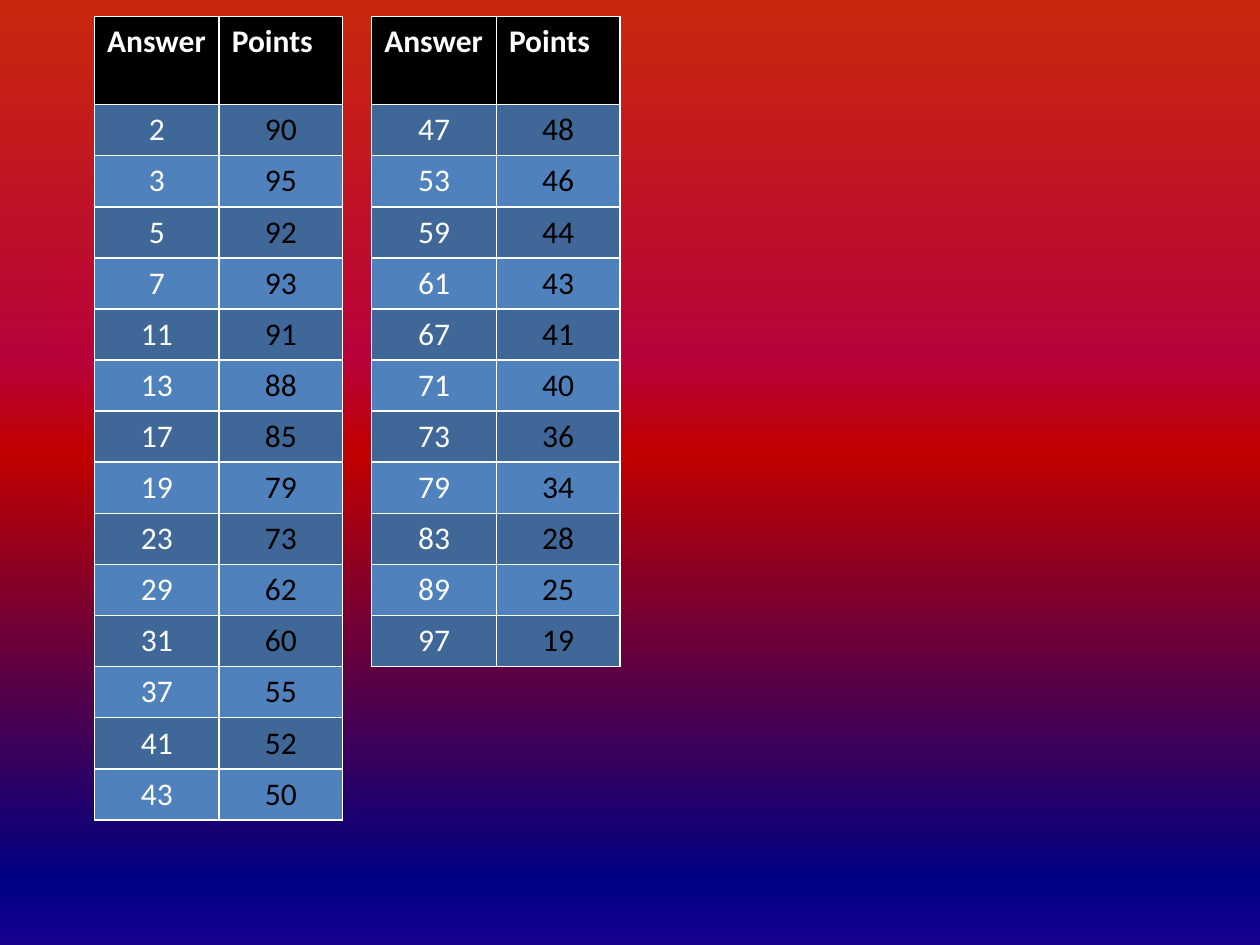
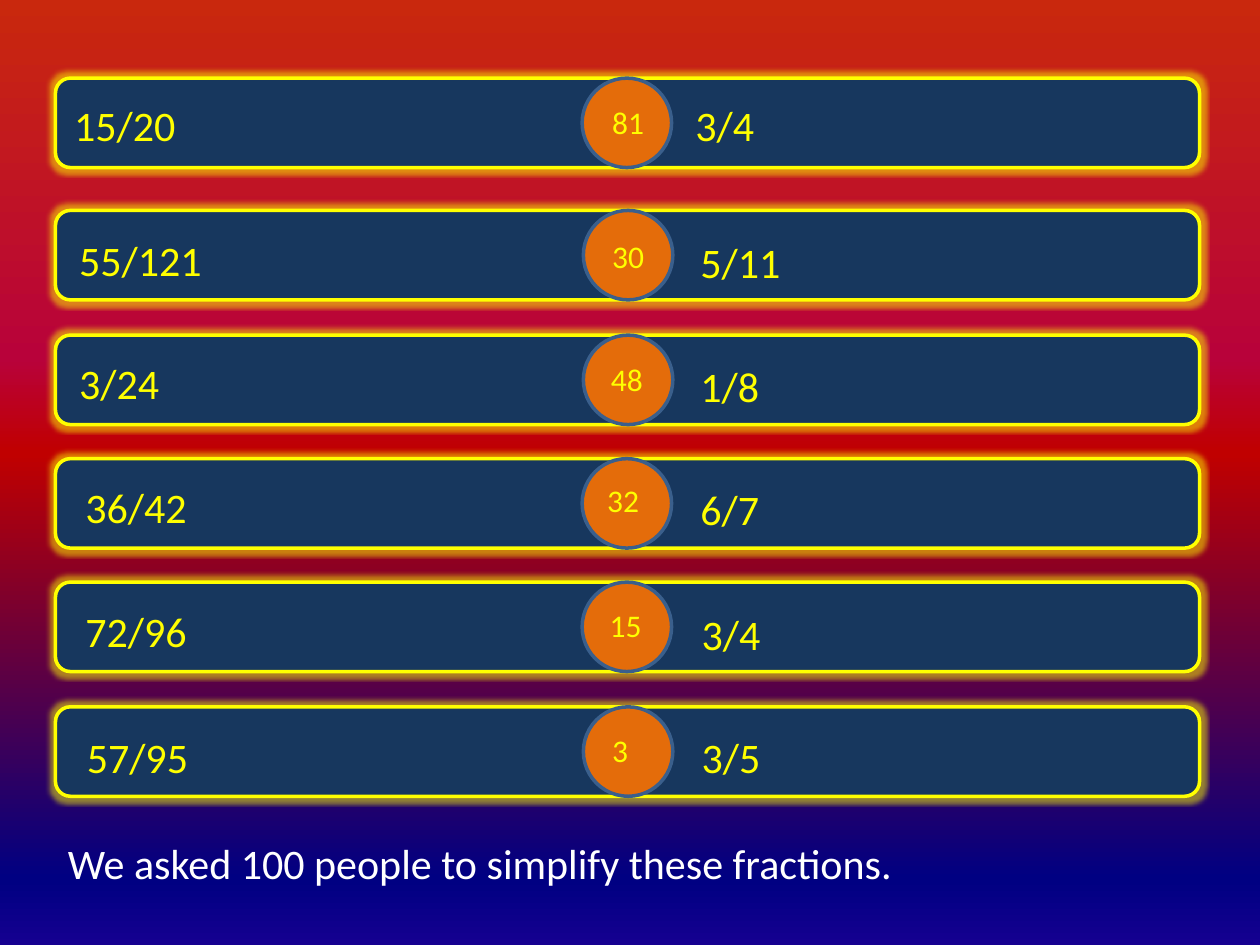
from collections import namedtuple
from dataclasses import dataclass

from lxml import etree
from pptx import Presentation
from pptx import util as u
from pptx.dml.color import RGBColor
from pptx.enum import shapes, text
from pptx.oxml.ns import qn

PX = u.Inches(1) // 100


@dataclass(frozen=True)
class Theme:
    """Colours and type sizes shared by the slides."""
    font: str = "Calibri"
    small: int = 18
    large: int = 24
    white: str = "FFFFFF"
    black: str = "000000"
    yellow: str = "FFFF00"
    navy: str = "17375E"
    orange: str = "E46C0A"
    rim: str = "3A5F8C"
    bands: tuple = ("3F6797", "4F81BD")
    backdrop: tuple = ((0, "C9280D"), (38, "B8023A"), (48, "C00000"),
                       (93, "000082"), (100, "150090"))


THEME = Theme()
Box = namedtuple("Box", "left top width height")
Label = namedtuple("Label", "words left top width")
Row = namedtuple("Row", "top circle_left question points answer")

LOW_PRIMES = ((2, 90), (3, 95), (5, 92), (7, 93), (11, 91), (13, 88), (17, 85),
              (19, 79), (23, 73), (29, 62), (31, 60), (37, 55), (41, 52), (43, 50))
HIGH_PRIMES = ((47, 48), (53, 46), (59, 44), (61, 43), (67, 41), (71, 40),
               (73, 36), (79, 34), (83, 28), (89, 25), (97, 19))

FRACTION_ROWS = (
    Row(62, 418, Label("15/20", 5, 12, 101), Label("81", 432, 15, 47), Label("3/4", 498, 12, 107)),
    Row(167, 419, Label("55/121", 9, 14, 163), Label("30", 432, 16, 47), Label("5/11", 502, 16, 135)),
    Row(266, 419, Label("3/24", 9, 13, 88), Label("48", 431, 15, 47), Label("1/8", 502, 15, 68)),
    Row(364, 418, Label("36/42", 14, 13, 120), Label("32", 428, 13, 47), Label("6/7", 502, 15, 135)),
    Row(462, 418, Label("72/96", 14, 14, 183), Label("15", 430, 14, 47), Label("3/4", 503, 16, 173)),
    Row(561, 419, Label("57/95", 15, 15, 181), Label("3", 432, 14, 47), Label("3/5", 503, 15, 134)),
)


def apply(target, values):
    """Set each named attribute on the target."""
    for name, value in values.items():
        setattr(target, name, value)


def emu(box):
    """Turn a box in px into EMU lengths."""
    return [length * PX for length in box]


def add_color(parent, color):
    """Append an RGB colour element and return it."""
    return etree.SubElement(parent, qn("a:srgbClr"), val=color)


def format_text(frame, words, size, color, bold=False, alignment=None):
    """Write one formatted paragraph into a text frame."""
    paragraph = frame.paragraphs[0]
    paragraph.alignment = alignment
    run = paragraph.add_run()
    run.text = words
    apply(run.font, {"name": THEME.font, "size": u.Pt(size), "bold": bold})
    run.font.color.rgb = RGBColor.from_string(color)


def paint_backdrop(master):
    """Give the slide master the vertical gradient."""
    fill = master.background.fill
    fill.gradient()
    fill.gradient_angle = 270
    stops = master.element.find(".//" + qn("a:gsLst"))
    for stop in list(stops):
        stops.remove(stop)
    for percent, color in THEME.backdrop:
        add_color(etree.SubElement(stops, qn("a:gs"), pos=str(percent * 1000)), color)


def add_borders(table_frame):
    """Draw thin white lines round every cell."""
    for properties in list(table_frame.element.iter(qn("a:tcPr"))):
        for index, side in enumerate("LRTB"):
            line = etree.Element(qn("a:ln" + side), w=str(u.Pt(1)))
            add_color(etree.SubElement(line, qn("a:solidFill")), THEME.white)
            properties.insert(index, line)


def add_score_table(slide, left, top, scores):
    """Place a table of answers and their points."""
    widths, header_height, row_height = (99, 98), 70, 40
    box = Box(left, top, sum(widths), header_height + row_height * len(scores))
    table_frame = slide.shapes.add_table(len(scores) + 1, len(widths), *emu(box))
    table = table_frame.table
    for column, width in zip(table.columns, widths):
        column.width = width * PX
    for index, values in enumerate((("Answer", "Points"), *scores)):
        header = index == 0
        table.rows[index].height = (header_height if header else row_height) * PX
        background = THEME.black if header else THEME.bands[(index - 1) % 2]
        for column, value in enumerate(values):
            cell = table.cell(index, column)
            cell.fill.solid()
            cell.fill.fore_color.rgb = RGBColor.from_string(background)
            color = THEME.black if column and not header else THEME.white
            format_text(cell.text_frame, str(value), THEME.small, color, header,
                        None if header else text.PP_ALIGN.CENTER)
    add_borders(table_frame)


def add_panel(slide, kind, box, fill, line):
    """Place a filled, outlined preset shape."""
    shape = slide.shapes.add_shape(kind, *emu(box))
    shape.shadow.inherit = False
    shape.fill.solid()
    shape.fill.fore_color.rgb = RGBColor.from_string(fill)
    shape.line.color.rgb = RGBColor.from_string(line)
    shape.line.width = u.Pt(2)
    return shape


def add_glow(shape, color):
    """Surround a shape with a soft glow."""
    effects = shape.element.spPr.find(qn("a:effectLst"))
    glow = etree.SubElement(effects, qn("a:glow"), rad=str(u.Pt(5)))
    etree.SubElement(add_color(glow, color), qn("a:alpha"), val="50000")


def add_label(slide, box, words, size, color):
    """Place a text box that grows with its text."""
    shape = slide.shapes.add_textbox(*emu(box))
    apply(shape.text_frame, {"word_wrap": True,
                             "auto_size": text.MSO_AUTO_SIZE.SHAPE_TO_FIT_TEXT})
    format_text(shape.text_frame, words, size, color)


def add_fraction_row(slide, box, row):
    """Place one bar with its question, points and answer."""
    bar = add_panel(slide, shapes.MSO_SHAPE.ROUNDED_RECTANGLE, box, THEME.navy, THEME.yellow)
    add_glow(bar, THEME.yellow)
    circle = Box(box.left + row.circle_left, box.top, box.height, box.height)
    add_panel(slide, shapes.MSO_SHAPE.OVAL, circle, THEME.orange, THEME.rim)
    for label, size, height in ((row.question, THEME.large, 50),
                                (row.answer, THEME.large, 50),
                                (row.points, THEME.small, 40)):
        place = Box(box.left + label.left, box.top + label.top, label.width, height)
        add_label(slide, place, label.words, size, THEME.yellow)


def build_score_slide(slide):
    """Fill the slide with the two score tables."""
    for left, scores in ((75, LOW_PRIMES), (295, HIGH_PRIMES)):
        add_score_table(slide, left, 13, scores)


def build_fraction_slide(slide):
    """Fill the slide with the fraction bars and the survey line."""
    for row in FRACTION_ROWS:
        add_fraction_row(slide, Box(44, row.top, 908, 71), row)
    add_label(slide, Box(44, 660, 819, 50),
              "We asked 100 people to simplify these fractions.", THEME.large, THEME.white)


def main():
    """Build and save the presentation."""
    presentation = Presentation()
    apply(presentation, {"slide_width": 1000 * PX, "slide_height": 750 * PX})
    paint_backdrop(presentation.slide_master)
    blank = presentation.slide_layouts[6]
    for build in (build_score_slide, build_fraction_slide):
        build(presentation.slides.add_slide(blank))
    presentation.save("out.pptx")


if __name__ == "__main__":
    main()
